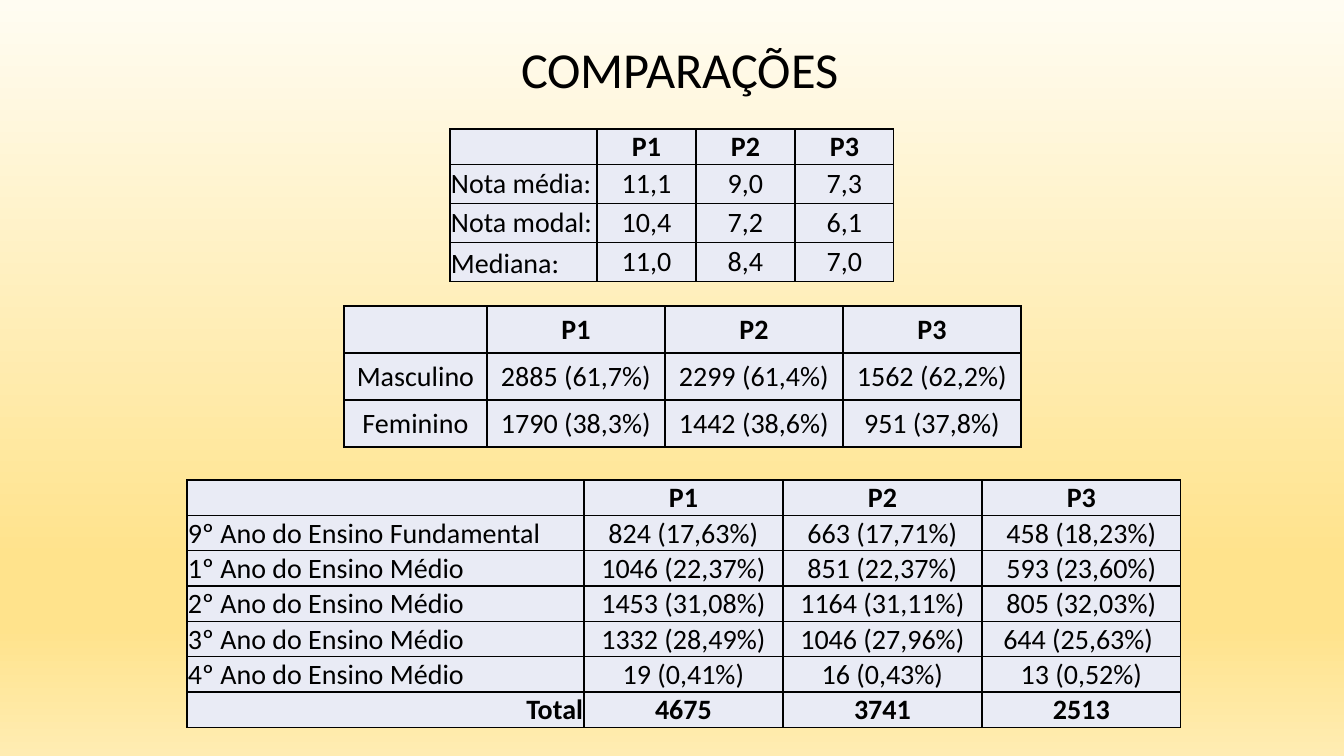
from copy import deepcopy
from dataclasses import dataclass

from lxml.etree import SubElement
from pptx import Presentation
from pptx.dml.color import RGBColor
from pptx.enum.text import MSO_ANCHOR, PP_ALIGN
from pptx.oxml.ns import qn
from pptx.slide import Slide
from pptx.table import _Cell
from pptx.text.text import _Paragraph
from pptx.util import Emu, Pt

FONT = "Calibri"
COLORS = {
    "text": "000000",
    "border": "000000",
    "cell": "E9EBF5",
    "cream": "FFFCF2",
    "gold": "FFE38C",
    "sand": "FFECB2",
}
BACKGROUND_STOPS = [(0, "cream"), (0.74, "gold"), (0.83, "gold"), (1, "sand")]
HEADER = ["", "P1", "P2", "P3"]


@dataclass(frozen=True)
class Comparison:
    left: int
    top: int
    label_width: int
    value_width: int
    header_height: int
    row_height: int
    rows: list[list[str]]
    label_align: PP_ALIGN = PP_ALIGN.LEFT
    last_label_anchor: MSO_ANCHOR = MSO_ANCHOR.MIDDLE
    has_total: bool = False


GENDER = Comparison(
    344, 306, 143, 178, 47, 47,
    [
        ["Masculino", "2885 (61,7%)", "2299 (61,4%)", "1562 (62,2%)"],
        ["Feminino", "1790 (38,3%)", "1442 (38,6%)", "951 (37,8%)"],
    ],
    label_align=PP_ALIGN.CENTER,
)
GRADES = Comparison(
    450, 129, 147, 99, 35, 39,
    [
        ["Nota média:", "11,1", "9,0", "7,3"],
        ["Nota modal:", "10,4", "7,2", "6,1"],
        ["Mediana:", "11,0", "8,4", "7,0"],
    ],
    last_label_anchor=MSO_ANCHOR.BOTTOM,
)
SCHOOL_YEARS = Comparison(
    187, 480, 397, 199, 34, 34,
    [
        ["9º Ano do Ensino Fundamental", "824 (17,63%)", "663 (17,71%)", "458 (18,23%)"],
        ["1º Ano do Ensino Médio", "1046 (22,37%)", "851 (22,37%)", "593 (23,60%)"],
        ["2º Ano do Ensino Médio", "1453 (31,08%)", "1164 (31,11%)", "805 (32,03%)"],
        ["3º Ano do Ensino Médio", "1332 (28,49%)", "1046 (27,96%)", "644 (25,63%) "],
        ["4º Ano do Ensino Médio", "19 (0,41%)", "16 (0,43%)", "13 (0,52%)"],
        ["Total", "4675", "3741", "2513"],
    ],
    has_total=True,
)


def px(length: int) -> Emu:
    return Emu(round(length * 914400 / 100.8))


def rgb(name: str) -> RGBColor:
    return RGBColor.from_string(COLORS[name])


def add_run(paragraph: _Paragraph, text: str, size: int, bold: bool = False) -> None:
    run = paragraph.add_run()
    run.text = text
    run.font.name = FONT
    run.font.size = Pt(size)
    run.font.bold = bold
    run.font.color.rgb = rgb("text")


def paint_background(slide: Slide) -> None:
    fill = slide.background.fill
    fill.gradient()
    fill.gradient_angle = 270
    stop_list = next(slide.element.iter(qn("a:gsLst")))
    while len(stop_list) < len(BACKGROUND_STOPS):
        stop_list.append(deepcopy(stop_list[0]))
    for stop, (position, color) in zip(fill.gradient_stops, BACKGROUND_STOPS):
        stop.position = position
        stop.color.rgb = rgb(color)


def add_title(slide: Slide, text: str) -> None:
    title = slide.shapes.title
    title.left, title.top, title.width, title.height = px(511), px(33), px(345), px(72)
    frame = title.text_frame
    frame.word_wrap = True
    frame.vertical_anchor = MSO_ANCHOR.TOP
    frame.paragraphs[0].alignment = PP_ALIGN.LEFT
    add_run(frame.paragraphs[0], text, 36)


def format_cell(cell: _Cell) -> None:
    """Set the insets, the 1 pt borders and the fill, in schema order."""
    cell.margin_left = cell.margin_top = cell.margin_right = px(1)
    cell.margin_bottom = 0
    properties = cell._tc.get_or_add_tcPr()
    for side in ("a:lnL", "a:lnR", "a:lnT", "a:lnB"):
        line = SubElement(properties, qn(side), w=str(Pt(1)))
        solid = SubElement(line, qn("a:solidFill"))
        SubElement(solid, qn("a:srgbClr"), val=COLORS["border"])
    cell.fill.solid()
    cell.fill.fore_color.rgb = rgb("cell")


def add_comparison(slide: Slide, spec_table: Comparison) -> None:
    rows = [HEADER, *spec_table.rows]
    last = len(rows) - 1
    widths = [spec_table.label_width] + [spec_table.value_width] * (len(HEADER) - 1)
    heights = [spec_table.header_height] + [spec_table.row_height] * last
    table = slide.shapes.add_table(
        len(rows), len(HEADER), px(spec_table.left), px(spec_table.top),
        px(sum(widths)), px(sum(heights)),
    ).table
    table.first_row = table.horz_banding = False
    for column, width in zip(table.columns, widths):
        column.width = px(width)
    for row, height in zip(table.rows, heights):
        row.height = px(height)

    for r, texts in enumerate(rows):
        is_total = spec_table.has_total and r == last
        for c, text in enumerate(texts):
            cell = table.cell(r, c)
            format_cell(cell)
            is_label = c == 0
            cell.vertical_anchor = (
                spec_table.last_label_anchor if is_label and r == last else MSO_ANCHOR.MIDDLE
            )
            if not text:
                continue
            paragraph = cell.text_frame.paragraphs[0]
            if not is_label:
                paragraph.alignment = PP_ALIGN.CENTER
            else:
                paragraph.alignment = PP_ALIGN.RIGHT if is_total else spec_table.label_align
            add_run(paragraph, text, 20, bold=r == 0 or is_total)


def main() -> None:
    presentation = Presentation()
    presentation.slide_width, presentation.slide_height = px(1344), px(756)
    slide = presentation.slides.add_slide(presentation.slide_layouts[5])
    paint_background(slide)
    add_title(slide, "COMPARAÇÕES")
    for comparison in (GENDER, GRADES, SCHOOL_YEARS):
        add_comparison(slide, comparison)
    presentation.save("out.pptx")


if __name__ == "__main__":
    main()
